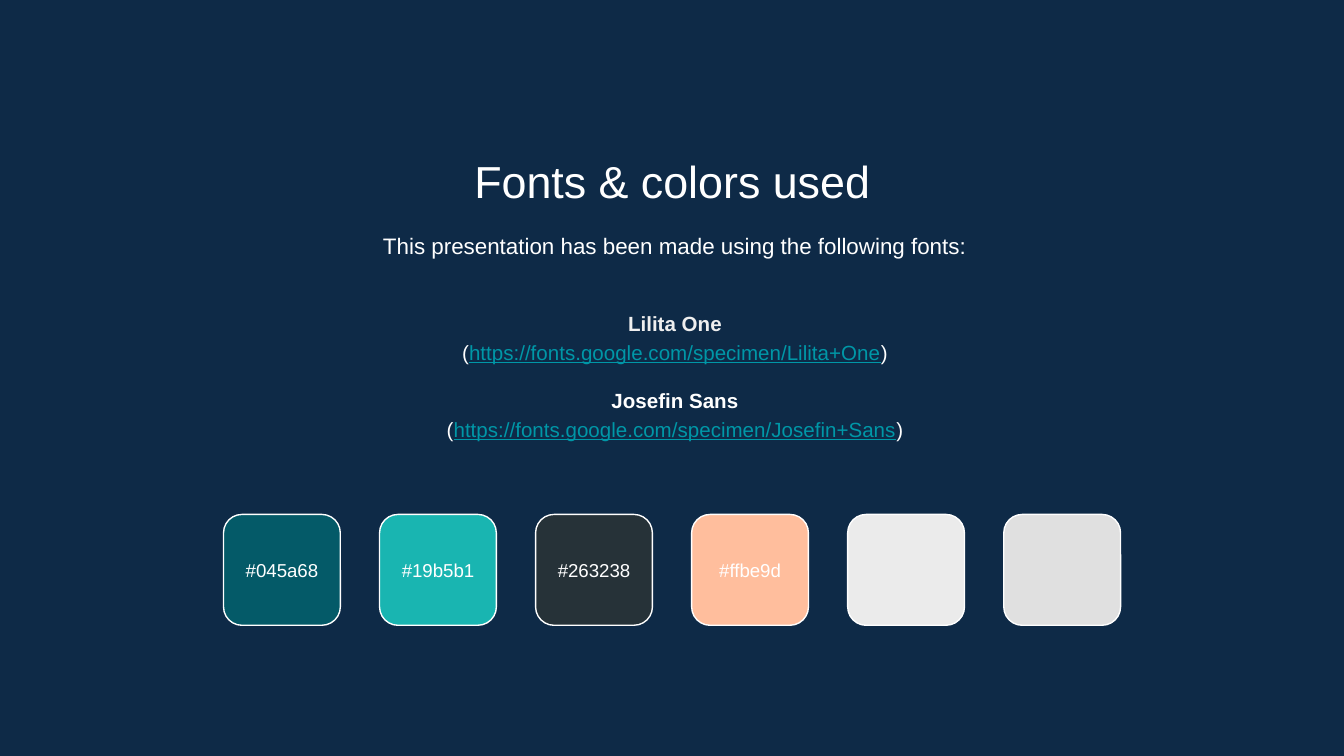
from pptx import Presentation
from pptx import util as u
from pptx.dml.color import RGBColor
from pptx.enum import shapes, text

COLORS = {
    "background": "0E2A47",
    "white": "FFFFFF",
    "soft_white": "EFEFEF",
    "link": "0097A7",
}
LABELLED_SWATCHES = ["#045a68", "#19b5b1", "#263238", "#ffbe9d"]
PLAIN_SWATCHES = ["#ebebeb", "#e0e0e0"]
SWATCH_LEFT, SWATCH_TOP, SWATCH_PITCH = 119.75, 275.6, 83.6
SWATCH_WIDTH, SWATCH_HEIGHT = 62.6, 59.4
FONTS = [
    ("Lilita One", "https://fonts.google.com/specimen/Lilita+One", "soft_white"),
    ("Josefin Sans", "https://fonts.google.com/specimen/Josefin+Sans", "white"),
]


def rgb(value):
    return RGBColor.from_string(value.lstrip("#").upper())


def add_run(paragraph, content, size=11, color="white", bold=False, underline=False):
    run = paragraph.add_run()
    run.text = content
    run.font.name = "Arial"
    run.font.size = u.Pt(size)
    run.font.bold = bold
    run.font.underline = underline
    run.font.color.rgb = rgb(COLORS[color])


class SlideBuilder:
    inset = u.Pt(7.2)

    def __init__(self, slide):
        self.slide = slide
        slide.background.fill.solid()
        slide.background.fill.fore_color.rgb = rgb(COLORS["background"])

    def text_box(self, left, top, width, height, lines, spacing=1.0,
                 anchor=text.MSO_ANCHOR.TOP):
        shape = self.slide.shapes.add_textbox(
            u.Pt(left), u.Pt(top), u.Pt(width), u.Pt(height))
        frame = shape.text_frame
        frame.word_wrap = True
        frame.vertical_anchor = anchor
        frame.margin_left = frame.margin_right = self.inset
        frame.margin_top = frame.margin_bottom = self.inset
        for index, (runs, space_before) in enumerate(lines):
            paragraph = frame.add_paragraph() if index else frame.paragraphs[0]
            paragraph.alignment = text.PP_ALIGN.CENTER
            paragraph.line_spacing = spacing
            if space_before:
                paragraph.space_before = u.Pt(space_before)
            for content, style in runs:
                add_run(paragraph, content, **style)

    def swatch(self, left, code):
        shape = self.slide.shapes.add_shape(
            shapes.MSO_SHAPE.ROUNDED_RECTANGLE, u.Pt(left), u.Pt(SWATCH_TOP),
            u.Pt(SWATCH_WIDTH), u.Pt(SWATCH_HEIGHT))
        shape.shadow.inherit = False
        shape.fill.solid()
        shape.fill.fore_color.rgb = rgb(code)
        shape.line.color.rgb = rgb(COLORS["white"])
        shape.line.width = u.Pt(0.75)

    def swatch_label(self, left, code):
        self.text_box(left, 288, SWATCH_WIDTH, 34.6, [([(code, {"size": 10})], 0)],
                      anchor=text.MSO_ANCHOR.MIDDLE)


def main():
    presentation = Presentation()
    presentation.slide_width, presentation.slide_height = u.Pt(720), u.Pt(405)
    builder = SlideBuilder(presentation.slides.add_slide(presentation.slide_layouts[6]))

    builder.text_box(82.6, 75, 555, 38, [([("Fonts & colors used", {"size": 24})], 0)])
    intro = "This presentation has been made using the following fonts:"
    builder.text_box(84.1, 114.75, 555, 34.6, [([(intro, {"size": 12})], 0)], spacing=1.15)

    font_lines = []
    for name, address, color in FONTS:
        font_lines.append(([(name, {"bold": True, "color": color})],
                           11 if font_lines else 0))
        font_lines.append(([("(", {}),
                            (address, {"color": "link", "underline": True}),
                            (")", {})], 0))
    builder.text_box(84.1, 151.3, 555, 98.6, font_lines, spacing=1.15,
                     anchor=text.MSO_ANCHOR.MIDDLE)

    for index, code in enumerate(LABELLED_SWATCHES + PLAIN_SWATCHES):
        left = SWATCH_LEFT + index * SWATCH_PITCH
        builder.swatch(left, code)
        if code in LABELLED_SWATCHES:
            builder.swatch_label(left, code)

    presentation.save("out.pptx")


if __name__ == "__main__":
    main()
